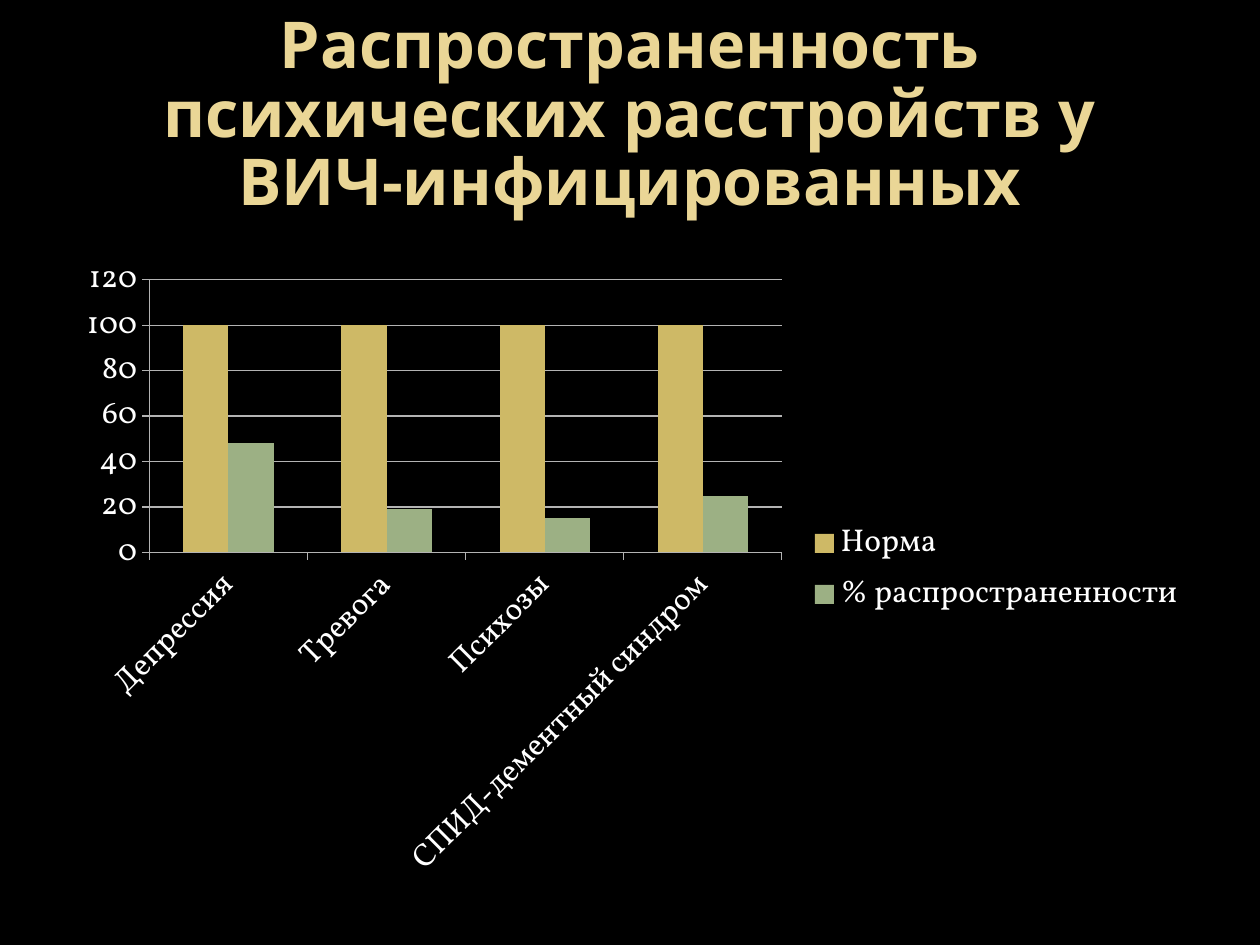
"""Build a slide with a column chart of mental disorders among HIV-infected people."""
import pptx
import pptx.chart.data
import pptx.dml.color
import pptx.enum.chart
import pptx.enum.text
import pptx.util
from pptx.util import Inches

TITLE = "Распространенность психических расстройств у ВИЧ-инфицированных"
CATEGORIES = ["Депрессия", "Тревога", "Психозы", "СПИД-дементный синдром"]

BLACK = pptx.dml.color.RGBColor(0x00, 0x00, 0x00)
WHITE = pptx.dml.color.RGBColor(0xFF, 0xFF, 0xFF)
CREAM = pptx.dml.color.RGBColor(0xEA, 0xD6, 0x96)
GOLD = pptx.dml.color.RGBColor(0xCE, 0xB9, 0x66)
GREEN = pptx.dml.color.RGBColor(0x9C, 0xB0, 0x84)
GREY = pptx.dml.color.RGBColor(0xB3, 0xB3, 0xB3)

SERIES = [
    ("Норма", [100, 100, 100, 100], GOLD),
    ("% распространенности", [48, 19, 15, 25], GREEN),
]


def add_title(slide):
    title = slide.shapes.title
    title.left, title.top = Inches(0.5), Inches(0.3)
    title.width, title.height = Inches(9), Inches(1.25)
    frame = title.text_frame
    frame.text = TITLE
    frame.word_wrap = True
    frame.auto_size = pptx.enum.text.MSO_AUTO_SIZE.NONE
    frame.vertical_anchor = pptx.enum.text.MSO_ANCHOR.MIDDLE
    paragraph = frame.paragraphs[0]
    paragraph.alignment = pptx.enum.text.PP_ALIGN.CENTER
    paragraph.line_spacing = 0.88
    paragraph.font.name = "Noto Sans"
    paragraph.font.size = pptx.util.Pt(36.9)
    paragraph.font.bold = True
    paragraph.font.color.rgb = CREAM


def style_line(line):
    line.color.rgb = GREY
    line.width = pptx.util.Pt(0.75)


def add_chart(slide):
    data = pptx.chart.data.CategoryChartData()
    data.categories = CATEGORIES
    for name, values, _ in SERIES:
        data.add_series(name, values)
    chart = slide.shapes.add_chart(
        pptx.enum.chart.XL_CHART_TYPE.COLUMN_CLUSTERED,
        Inches(0.51), Inches(1.94), Inches(9), Inches(5.15), data,
    ).chart
    chart.has_title = False
    chart.font.name = "Vollkorn"
    chart.font.size = pptx.util.Pt(18)
    chart.font.color.rgb = WHITE

    plot = chart.plots[0]
    plot.gap_width = 150
    plot.overlap = 0
    plot.vary_by_categories = False
    for series, (_, _, color) in zip(plot.series, SERIES):
        series.format.fill.solid()
        series.format.fill.fore_color.rgb = color

    for axis in (chart.category_axis, chart.value_axis):
        axis.major_tick_mark = pptx.enum.chart.XL_TICK_MARK.OUTSIDE
        style_line(axis.format.line)
    chart.category_axis.tick_labels.font.size = pptx.util.Pt(18)
    text_body = chart.category_axis.tick_labels.font._element.getparent().getparent()
    text_body.getparent().bodyPr.set("rot", "-2700000")
    value_axis = chart.value_axis
    value_axis.minimum_scale, value_axis.maximum_scale = 0, 120
    value_axis.major_unit = 20
    value_axis.has_major_gridlines = True
    style_line(value_axis.major_gridlines.format.line)

    chart.has_legend = True
    chart.legend.position = pptx.enum.chart.XL_LEGEND_POSITION.RIGHT
    chart.legend.include_in_layout = False


def main():
    presentation = pptx.Presentation()
    presentation.slide_width, presentation.slide_height = Inches(10), Inches(7.5)
    slide = presentation.slides.add_slide(presentation.slide_layouts[5])
    slide.background.fill.solid()
    slide.background.fill.fore_color.rgb = BLACK
    add_title(slide)
    add_chart(slide)
    presentation.save("out.pptx")


if __name__ == "__main__":
    main()
